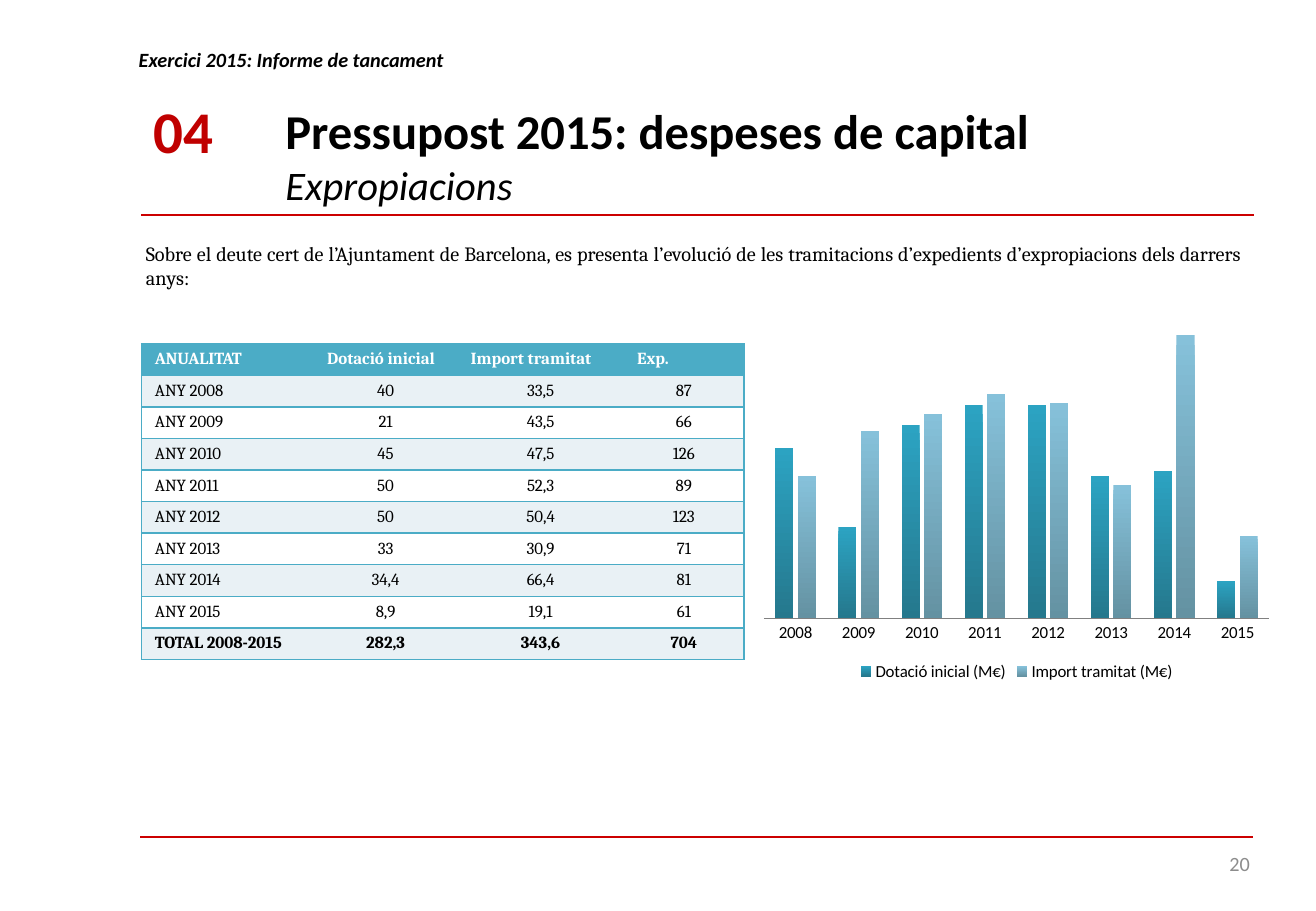
from dataclasses import dataclass

from lxml import etree
from pptx import Presentation
from pptx.chart.data import CategoryChartData
from pptx.dml.color import RGBColor
from pptx.enum.chart import XL_CHART_TYPE, XL_LEGEND_POSITION, XL_TICK_MARK
from pptx.enum.shapes import MSO_CONNECTOR
from pptx.enum.text import MSO_ANCHOR, MSO_AUTO_SIZE, PP_ALIGN
from pptx.oxml.ns import qn
from pptx.util import Cm, Pt

COLUMNS = XL_CHART_TYPE.COLUMN_CLUSTERED
LEGEND_BOTTOM = XL_LEGEND_POSITION.BOTTOM
NO_TICKS = XL_TICK_MARK.NONE
STRAIGHT = MSO_CONNECTOR.STRAIGHT
MIDDLE, TOP = MSO_ANCHOR.MIDDLE, MSO_ANCHOR.TOP
FIXED_SIZE = MSO_AUTO_SIZE.NONE
LEFT, CENTER, RIGHT, JUSTIFY = (
    PP_ALIGN.LEFT, PP_ALIGN.CENTER, PP_ALIGN.RIGHT, PP_ALIGN.JUSTIFY)
COMPARISON_LAYOUT = 4
PLAIN_TABLE_STYLE = "{2D5ABB26-0587-4C30-8999-92F81FD0307C}"


@dataclass(frozen=True)
class Theme:
    sans: str = "Calibri"
    serif: str = "Cambria"
    text: str = "000000"
    white: str = "FFFFFF"
    grey: str = "8C8C8C"
    axis: str = "808080"
    rule: str = "CC0000"
    number: str = "C00000"
    accent: str = "4BACC6"
    band: str = "E9F1F5"
    gradients: tuple = (("2CA3C2", "25788D"), ("86C1DA", "6492A2"))
    title_size: float = 28.8
    number_size: float = 35
    subtitle_size: float = 24
    body_size: float = 12
    data_size: float = 10


THEME = Theme()

HEADINGS = ["ANUALITAT", "Dotació inicial", "Import tramitat", "Exp."]
YEARS = [
    ["2008", "40", "33,5", "87"],
    ["2009", "21", "43,5", "66"],
    ["2010", "45", "47,5", "126"],
    ["2011", "50", "52,3", "89"],
    ["2012", "50", "50,4", "123"],
    ["2013", "33", "30,9", "71"],
    ["2014", "34,4", "66,4", "81"],
    ["2015", "8,9", "19,1", "61"],
]
TOTAL = ["TOTAL 2008-2015", "282,3", "343,6", "704"]
# Column heights, with the tallest column as 100
CHART_SERIES = {
    "Dotació inicial (M€)": [60, 32, 68, 75, 75, 50, 52, 13],
    "Import tramitat (M€)": [50, 66, 72, 79, 76, 47, 100, 29],
}


def rgb(color):
    return RGBColor.from_string(color)


def set_values(target, values):
    for name, value in values.items():
        setattr(target, name, value)


def format_font(font, size, name=THEME.sans, color=THEME.text,
                bold=False, italic=False):
    set_values(font, {"name": name, "size": Pt(size),
                      "bold": bold, "italic": italic})
    font.color.rgb = rgb(color)


def write_text(frame, text, size, align=LEFT, **font_values):
    para = frame.paragraphs[0]
    set_values(para, {"alignment": align, "space_before": Pt(0)})
    span = para.add_run()
    span.text = text
    format_font(span.font, size, **font_values)


def fill_box(box, place, text, size, anchor=MIDDLE, **values):
    lengths = map(Cm, place)
    set_values(box, dict(zip(("left", "top", "width", "height"), lengths)))
    set_values(box.text_frame, {"word_wrap": True, "auto_size": FIXED_SIZE,
                                "vertical_anchor": anchor})
    write_text(box.text_frame, text, size, **values)


def add_text(page, place, text, size, **values):
    box = page.shapes.add_textbox(*map(Cm, place))
    fill_box(box, place, text, size, **values)


def add_rule(page, left, top, width):
    rule = page.shapes.add_connector(
        STRAIGHT, Cm(left), Cm(top), Cm(left + width), Cm(top))
    rule.line.color.rgb = rgb(THEME.rule)
    rule.line.width = Pt(1)
    etree.SubElement(rule._element.spPr, qn("a:effectLst"))


def add_borders(cell, sides):
    properties = cell._tc.get_or_add_tcPr()
    for side in sides:
        line = etree.SubElement(properties, qn(f"a:ln{side}"), w=str(Pt(1)))
        solid = etree.SubElement(line, qn("a:solidFill"))
        etree.SubElement(solid, qn("a:srgbClr"), val=THEME.accent)


def add_budget_table(page, left, top, widths, row_height):
    rows = [HEADINGS, *([f"ANY {year}", *rest] for year, *rest in YEARS), TOTAL]
    last_row, last_column = len(rows) - 1, len(widths) - 1
    frame = page.shapes.add_table(
        len(rows), len(widths), Cm(left), Cm(top),
        Cm(sum(widths)), Cm(row_height * len(rows)))
    table = frame.table
    set_values(table, {"first_row": False, "horz_banding": False})
    table._tbl.tblPr.find(qn("a:tableStyleId")).text = PLAIN_TABLE_STYLE
    for column, width in zip(table.columns, widths):
        column.width = Cm(width)

    margins = {"margin_left": Cm(0.28), "margin_right": Cm(0.28),
               "margin_top": Cm(0.12), "margin_bottom": Cm(0.12)}
    for row_index, row in enumerate(rows):
        table.rows[row_index].height = Cm(row_height)
        heading = row_index == 0
        fill = THEME.accent if heading else (
            THEME.band if row_index % 2 else THEME.white)
        for column_index, text in enumerate(row):
            cell = table.cell(row_index, column_index)
            set_values(cell, margins)
            sides = ["L"] * (column_index == 0)
            sides += ["R"] * (column_index == last_column)
            add_borders(cell, sides + ["T", "B"])
            cell.fill.solid()
            cell.fill.fore_color.rgb = rgb(fill)
            write_text(cell.text_frame, text, THEME.data_size,
                       align=LEFT if heading or column_index == 0 else CENTER,
                       name=THEME.serif, bold=row_index in (0, last_row),
                       color=THEME.white if heading else THEME.text)


def set_plot_layout(chart, **fractions):
    plot_area = chart._chartSpace.chart.plotArea
    layout = plot_area.find(qn("c:layout"))
    if layout is None:
        layout = etree.Element(qn("c:layout"))
        plot_area.insert(0, layout)
    manual = etree.SubElement(layout, qn("c:manualLayout"))
    settings = {"layoutTarget": "inner", "xMode": "edge", "yMode": "edge"}
    for name, value in {**settings, **fractions}.items():
        etree.SubElement(manual, qn(f"c:{name}"), val=str(value))


def add_budget_chart(page, place):
    chart_data = CategoryChartData()
    chart_data.categories = [row[0] for row in YEARS]
    for name, heights in CHART_SERIES.items():
        chart_data.add_series(name, heights)
    chart = page.shapes.add_chart(COLUMNS, *map(Cm, place), chart_data).chart
    set_values(chart, {"has_title": False, "has_legend": True})
    format_font(chart.font, THEME.data_size)
    set_values(chart.legend, {"position": LEGEND_BOTTOM,
                              "include_in_layout": False})
    format_font(chart.legend.font, THEME.data_size)

    # Axes
    set_values(chart.value_axis, {
        "visible": False, "has_major_gridlines": False,
        "minimum_scale": 0, "maximum_scale": 105.4})
    chart.category_axis.major_tick_mark = NO_TICKS
    chart.category_axis.format.line.color.rgb = rgb(THEME.axis)

    # Columns shaded from top to bottom
    plot = chart.plots[0]
    set_values(plot, {"gap_width": 125, "overlap": -24,
                      "vary_by_categories": False})
    for series, colors in zip(plot.series, THEME.gradients):
        fill = series.format.fill
        fill.gradient()
        fill.gradient_angle = 270
        for stop, color in zip(fill.gradient_stops, colors):
            stop.color.rgb = rgb(color)
    set_plot_layout(chart, x=0.02, y=0.02, w=0.96, h=0.8)


def main():
    deck = Presentation()
    set_values(deck, {"slide_width": Cm(27.51), "slide_height": Cm(19.05)})
    page = deck.slides.add_slide(deck.slide_layouts[COMPARISON_LAYOUT])

    # Running header, rules and page number
    add_rule(page, 2.95, 4.5, 23.26)
    add_rule(page, 2.93, 17.5, 23.26)
    add_text(page, (2.65, 0.86, 10.31, 0.76),
             "Exercici 2015: Informe de tancament", THEME.body_size,
             anchor=TOP, bold=True, italic=True)
    add_text(page, (19.95, 17.55, 6.43, 1.02), "20", THEME.body_size,
             align=RIGHT, color=THEME.grey)

    # Section number, title and subtitle
    fill_box(page.shapes.title, (5.71, 2.13, 20.55, 1.19),
             "Pressupost 2015: despeses de capital", THEME.title_size, bold=True)
    fill_box(page.placeholders[1], (2.95, 2.13, 3, 1.19), "04",
             THEME.number_size, color=THEME.number, bold=True)
    fill_box(page.placeholders[3], (5.71, 3.26, 20.55, 1.19), "Expropiacions",
             THEME.subtitle_size, italic=True)
    for box in list(page.placeholders):
        if not box.text_frame.text:
            box._element.getparent().remove(box._element)

    # Introduction, table and chart
    add_text(page, (2.8, 4.92, 23.42, 1.27),
             "Sobre el deute cert de l’Ajuntament de Barcelona, es presenta "
             "l’evolució de les tramitacions d’expedients d’expropiacions dels "
             "darrers anys:", THEME.body_size, align=JUSTIFY, name=THEME.serif)
    add_budget_table(page, 2.96, 7.19, [3.6, 3, 3.48, 2.51], 0.66)
    add_budget_chart(page, (15.75, 6.52, 11, 7.82))
    deck.save("out.pptx")


if __name__ == "__main__":
    main()
